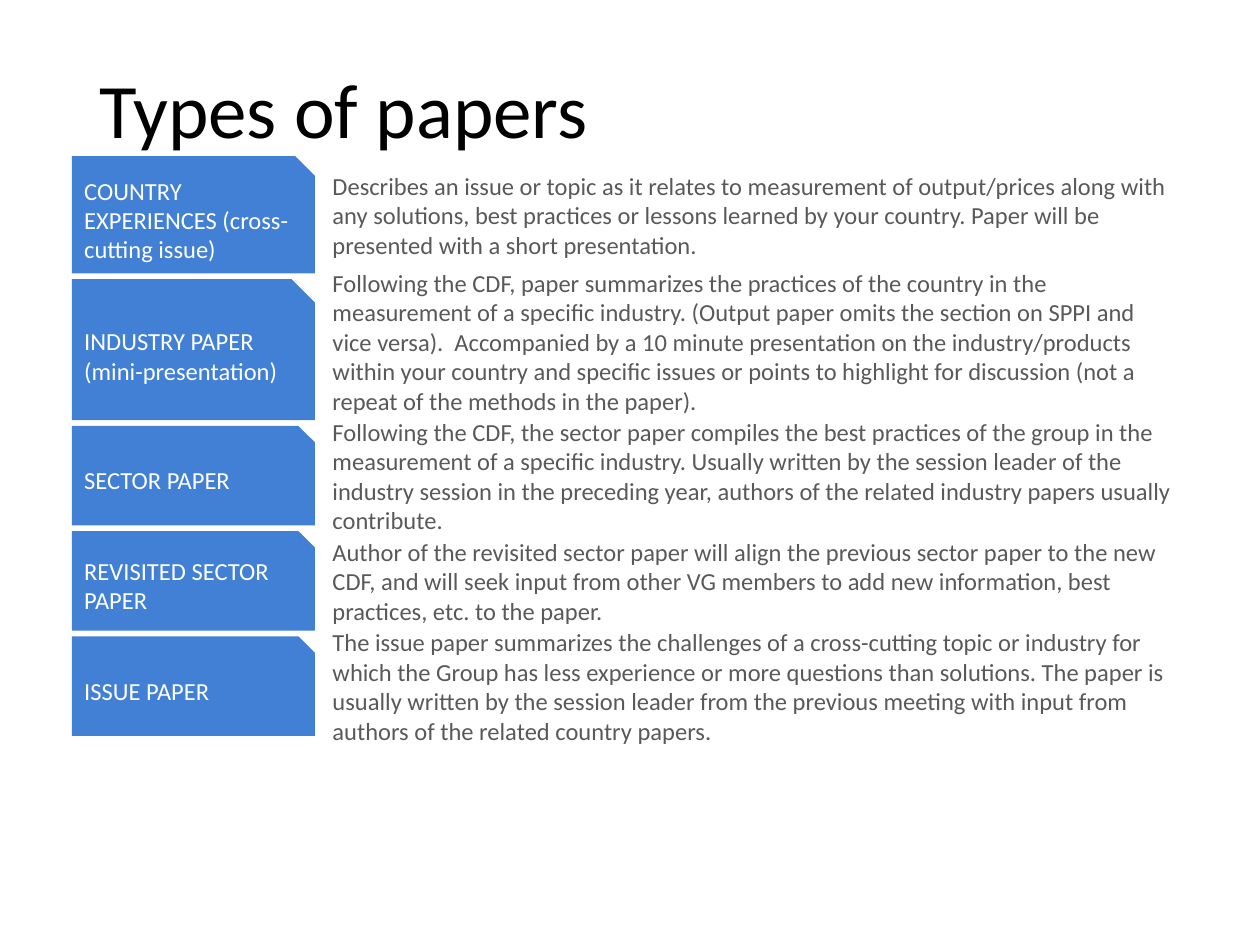
import pptx
import pptx.util
import pptx.dml.color
import pptx.enum.shapes
import pptx.enum.text

RGBColor = pptx.dml.color.RGBColor
BLUE = RGBColor(0x42, 0x80, 0xD5)
WHITE = RGBColor(0xFF, 0xFF, 0xFF)
GREY = RGBColor(0x59, 0x59, 0x59)
BLACK = RGBColor(0, 0, 0)

# The grid has 100 columns and 75 rows
COLS, ROWS = 100, 75
TOP, GAP = 12.4, 0.45
LABEL_X, LABEL_W = 5.7, 19.3
TEXT_X, TEXT_W = 25.4, 69.1

# Label, description, label height and text height in rows
PAPERS = [
    ("COUNTRY EXPERIENCES (cross-cutting issue)",
     "Describes an issue or topic as it relates to measurement of output/prices "
     "along with any solutions, best practices or lessons learned by your country. "
     "Paper will be presented with a short presentation.", 9.3, 9.3),
    ("INDUSTRY PAPER (mini-presentation)",
     "Following the CDF, paper summarizes the practices of the country in the "
     "measurement of a specific industry. (Output paper omits the section on SPPI "
     "and vice versa).  Accompanied by a 10 minute presentation on the "
     "industry/products within your country and specific issues or points to "
     "highlight for discussion (not a repeat of the methods in the paper).", 11.2, 9.9),
    ("SECTOR PAPER",
     "Following the CDF, the sector paper compiles the best practices of the group "
     "in the measurement of a specific industry. Usually written by the session "
     "leader of the industry session in the preceding year, authors of the related "
     "industry papers usually contribute.", 7.9, 7.9),
    ("REVISITED SECTOR PAPER",
     "Author of the revisited sector paper will align the previous sector paper to "
     "the new CDF, and will seek input from other VG members to add new information, "
     "best practices, etc. to the paper.", 7.9, 7.9),
    ("ISSUE PAPER",
     "The issue paper summarizes the challenges of a cross-cutting topic or industry "
     "for which the Group has less experience or more questions than solutions. The "
     "paper is usually written by the session leader from the previous meeting with "
     "input from authors of the related country papers.", 7.9, 7.9),
]


class Deck:
    font = "Calibri"

    def __init__(self):
        self.prs = pptx.Presentation()
        self.prs.slide_width = pptx.util.Inches(10)
        self.prs.slide_height = pptx.util.Inches(7.5)
        self.slide = self.prs.slides.add_slide(self.prs.slide_layouts[6])

    def place(self, x, y, w, h):
        col = self.prs.slide_width / COLS
        row = self.prs.slide_height / ROWS
        return int(x * col), int(y * row), int(w * col), int(h * row)

    def letter(self, shape, words, size, color):
        frame = shape.text_frame
        frame.word_wrap = True
        frame.vertical_anchor = pptx.enum.text.MSO_ANCHOR.MIDDLE
        frame.text = words
        para = frame.paragraphs[0]
        para.alignment = pptx.enum.text.PP_ALIGN.LEFT
        for run in para.runs:
            run.font.name = self.font
            run.font.size = pptx.util.Pt(size)
            run.font.color.rgb = color
        return para

    def text(self, words, box, size=14, color=GREY):
        shape = self.slide.shapes.add_textbox(*self.place(*box))
        return self.letter(shape, words, size, color)

    def label(self, words, box):
        kind = pptx.enum.shapes.MSO_SHAPE.SNIP_1_RECTANGLE
        shape = self.slide.shapes.add_shape(kind, *self.place(*box))
        shape.shadow.inherit = False
        shape.fill.solid()
        shape.fill.fore_color.rgb = BLUE
        shape.line.fill.background()
        self.letter(shape, words, 14, WHITE)


def main():
    deck = Deck()

    # Title
    title = deck.text("Types of papers", (6.9, 1.8, 86.2, 14.5), 44, BLACK)
    title.line_spacing = 0.9

    # One label and description per kind of paper
    y = TOP
    for name, about, high, deep in PAPERS:
        deck.label(name, (LABEL_X, y, LABEL_W, high))
        deck.text(about, (TEXT_X, y, TEXT_W, deep))
        y += high + GAP

    deck.prs.save("out.pptx")


if __name__ == "__main__":
    main()
